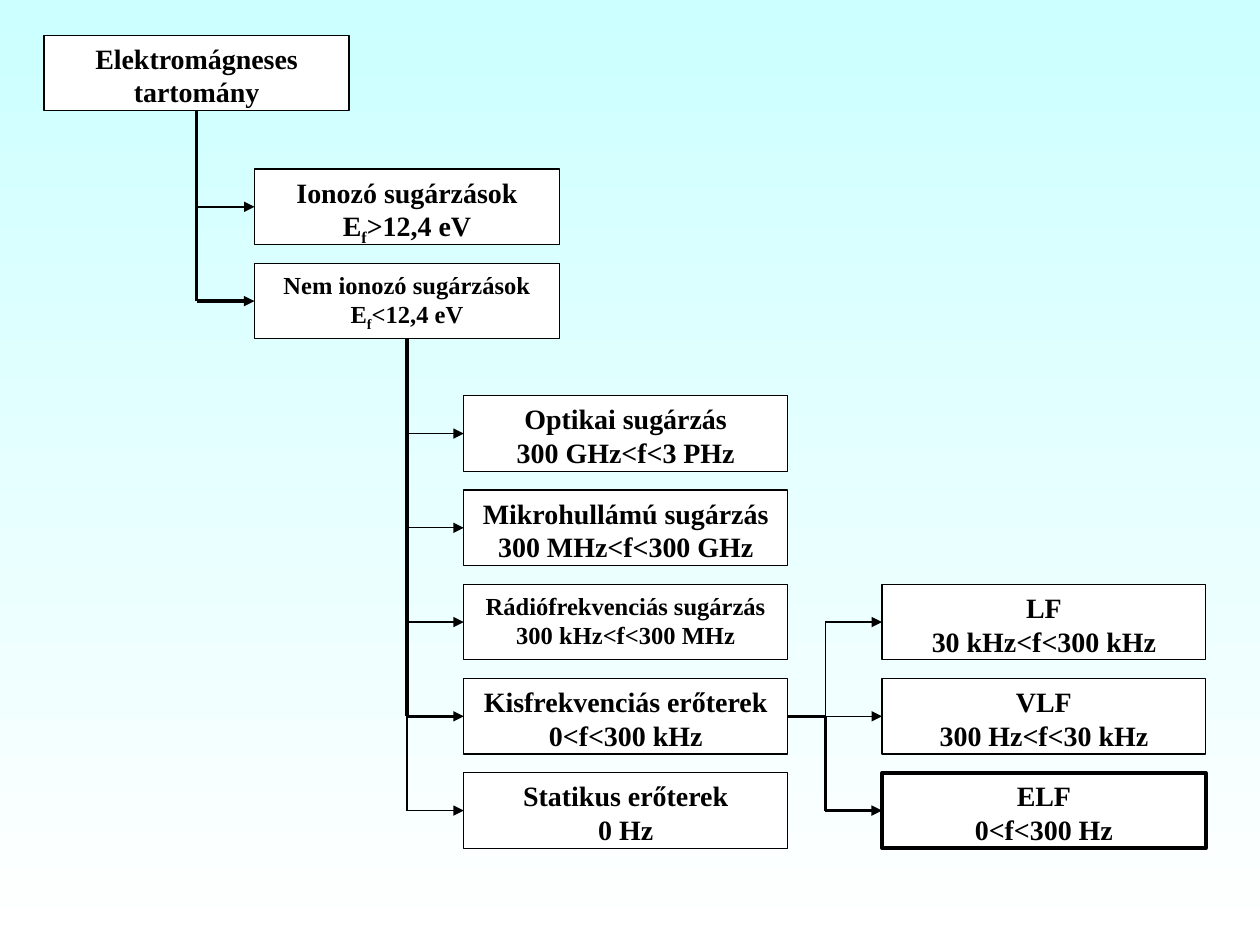
from dataclasses import dataclass

from lxml.etree import SubElement
from pptx import Presentation
from pptx.dml.color import RGBColor
from pptx.enum.shapes import MSO_CONNECTOR, MSO_SHAPE
from pptx.enum.text import MSO_ANCHOR, PP_ALIGN
from pptx.oxml.ns import qn
from pptx.util import Cm, Pt


@dataclass(frozen=True)
class Theme:
    font: str = "Times New Roman"
    ink: RGBColor = RGBColor(0x00, 0x00, 0x00)
    paper: RGBColor = RGBColor(0xFF, 0xFF, 0xFF)
    sky: RGBColor = RGBColor(0xCC, 0xFF, 0xFF)
    size: int = 16
    small: int = 14
    thin: float = 0.75
    thick: float = 2


class TreeSlide:
    """Draws a tree of boxes and branches on one page, in centimetres."""
    box_height = 1.52

    def __init__(self, deck, theme):
        self.theme = theme
        self.page = deck.slides.add_slide(deck.slide_layouts[6])
        self.shapes = self.page.shapes.add_group_shape().shapes

    def background(self):
        fill = self.page.background.fill
        fill.gradient()
        fill.gradient_angle = 270
        for stop, color in zip(fill.gradient_stops, (self.theme.sky, self.theme.paper)):
            stop.color.rgb = color

    def box(self, left, top, width, text, size=None, weight=None):
        """Add a box; an underscore makes the next letter a subscript."""
        box = self.shapes.add_shape(MSO_SHAPE.RECTANGLE, Cm(left), Cm(top),
                                    Cm(width), Cm(self.box_height))
        box.shadow.inherit = False
        box.fill.solid()
        box.fill.fore_color.rgb = self.theme.paper
        box.line.color.rgb = self.theme.ink
        box.line.width = Pt(weight or self.theme.thin)
        frame = box.text_frame
        frame.word_wrap = True
        frame.vertical_anchor = MSO_ANCHOR.TOP
        frame.text = text.replace("_", "")
        for para, line in zip(frame.paragraphs, text.split("\n")):
            para.alignment = PP_ALIGN.CENTER
            if "_" in line:
                self.subscript(para, line)
            for span in para.runs:
                span.font.name = self.theme.font
                span.font.size = Pt(size or self.theme.size)
                span.font.bold = True
                span.font.color.rgb = self.theme.ink
        return box

    def subscript(self, para, line):
        base, rest = line.split("_")
        para.runs[0].text = base
        low, tail = para.add_run(), para.add_run()
        low.text, tail.text = rest[0], rest[1:]
        low.font._element.set("baseline", "-25000")

    def line(self, start, end, weight, arrow=False):
        line = self.shapes.add_connector(MSO_CONNECTOR.STRAIGHT,
                                         *(Cm(value) for value in (*start, *end)))
        line.line.color.rgb = self.theme.ink
        line.line.width = Pt(weight)
        if arrow:
            SubElement(line.line._get_or_add_ln(), qn("a:tailEnd"), type="triangle")
        SubElement(line._element.spPr, qn("a:effectLst"))

    def arrows(self, spine, children, main):
        """Lead an arrow from the spine to each child, thick to the main one."""
        for child in children:
            weight = self.theme.thick if child is main else self.theme.thin
            self.line((spine, middle(child)), (child.left.cm, middle(child)), weight, True)


def middle(box):
    return (box.top + box.height / 2) / Cm(1)


def center(box):
    return (box.left + box.width / 2) / Cm(1)


def bottom(box):
    return (box.top + box.height) / Cm(1)


def right(box):
    return (box.left + box.width) / Cm(1)


def main():
    theme = Theme()
    deck = Presentation()
    deck.slide_width, deck.slide_height = Cm(25.4), Cm(19.05)
    tree = TreeSlide(deck, theme)
    tree.background()

    # Grid: four columns of boxes and one row pitch
    columns = (0.89, 5.13, 9.35, 17.78)
    narrow, wide, pitch = 6.15, 6.53, 1.9
    kind_top, band_top = 3.41, 7.98

    # Root and the two kinds of radiation
    root = tree.box(columns[0], 0.71, narrow, "Elektromágneses tartomány")
    ionizing = tree.box(columns[1], kind_top, narrow, "Ionozó sugárzások\nE_f>12,4 eV")
    non_ionizing = tree.box(columns[1], kind_top + pitch, narrow,
                            "Nem ionozó sugárzások\nE_f<12,4 eV", theme.small)

    # Bands of non-ionizing radiation
    bands = [tree.box(columns[2], band_top + row * pitch, wide, text, size)
             for row, (text, size) in enumerate((
                 ("Optikai sugárzás\n300 GHz<f<3 PHz", theme.size),
                 ("Mikrohullámú sugárzás\n300 MHz<f<300 GHz", theme.size),
                 ("Rádiófrekvenciás sugárzás\n300 kHz<f<300 MHz", theme.small),
                 ("Kisfrekvenciás erőterek\n0<f<300 kHz", theme.size),
                 ("Statikus erőterek\n0 Hz", theme.size)))]
    low, static = bands[3:]

    # Low-frequency ranges, level with the last three bands
    ranges = [tree.box(columns[3], band_top + row * pitch, wide, text, weight=weight)
              for row, (text, weight) in enumerate((
                  ("LF\n30 kHz<f<300 kHz", theme.thin),
                  ("VLF\n300 Hz<f<30 kHz", theme.thin),
                  ("ELF\n0<f<300 Hz", theme.thick)), start=2)]
    lf, _, elf = ranges

    # Branches from the root
    spine = center(root)
    tree.line((spine, bottom(root)), (spine, middle(non_ionizing)), theme.thick)
    tree.arrows(spine, (ionizing, non_ionizing), non_ionizing)

    # Branches to the bands
    spine = center(non_ionizing)
    tree.line((spine, bottom(non_ionizing)), (spine, middle(low)), theme.thick)
    tree.line((spine, middle(low)), (spine, middle(static)), theme.thin)
    tree.arrows(spine, bands, low)

    # Branches to the low-frequency ranges
    spine, hub = right(low) + 0.76, middle(low)
    tree.line((right(low), hub), (spine, hub), theme.thick)
    tree.line((spine, hub), (spine, middle(lf)), theme.thin)
    tree.line((spine, hub), (spine, middle(elf)), theme.thick)
    tree.arrows(spine, ranges, elf)

    deck.save("out.pptx")


if __name__ == "__main__":
    main()
